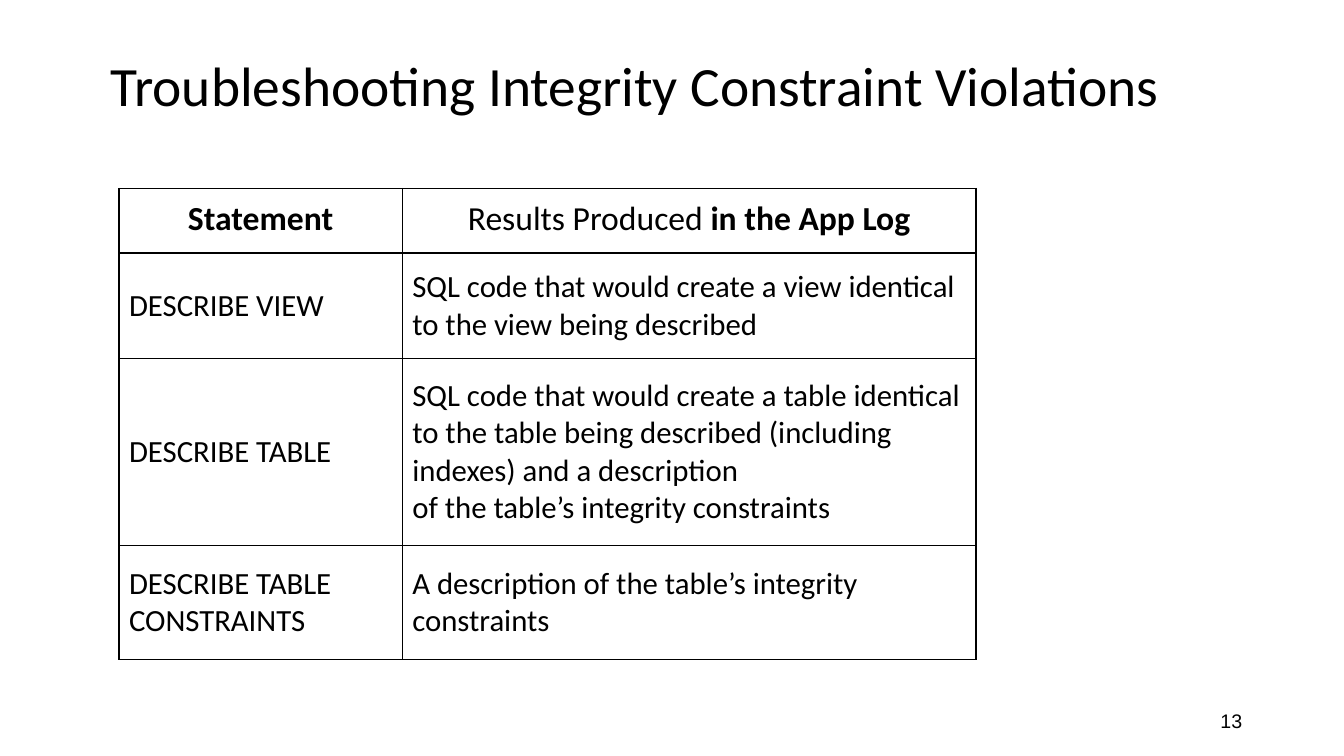
from lxml import etree
from pptx import Presentation, util as u
from pptx.dml.color import RGBColor
from pptx.enum import text
from pptx.oxml.ns import qn

# Content: each cell is a list of (words, bold) runs
TITLE = "Troubleshooting Integrity Constraint Violations"
PAGE_NUMBER = "13"
HEADER = [
    [("Statement", True)],
    [("Results Produced ", False), ("in the App Log", True)],
]
STATEMENTS = [
    ("DESCRIBE VIEW",
     "SQL code that would create a view identical to the view being described"),
    ("DESCRIBE TABLE",
     "SQL code that would create a table identical to the table being described "
     "(including indexes) and a description \nof the table’s integrity constraints"),
    ("DESCRIBE TABLE\nCONSTRAINTS",
     "A description of the table’s integrity constraints"),
]
ROWS = [HEADER] + [[[(words, False)] for words in pair] for pair in STATEMENTS]

# Layout in inches
COLUMN_WIDTHS = [2.81, 5.69]
ROW_HEIGHTS = [0.64, 1.05, 1.85, 1.13]
TABLE_LEFT, TABLE_TOP = 1.18, 1.87
CELL_MARGIN = 0.1

BLACK = RGBColor(0, 0, 0)
BODY_FONT, NUMBER_FONT = "Calibri", "Arial"


def add_runs(para, runs, size, font=BODY_FONT):
    for words, bold in runs:
        for index, line in enumerate(words.split("\n")):
            if index:
                para.add_line_break()
            span = para.add_run()
            span.text = line
            span.font.size = u.Pt(size)
            span.font.name = font
            span.font.bold = bold
            span.font.color.rgb = BLACK


def add_label(page, place, words, size, font, align):
    box = page.shapes.add_textbox(*[u.Inches(length) for length in place])
    frame = box.text_frame
    frame.word_wrap = True
    frame.vertical_anchor = text.MSO_ANCHOR.MIDDLE
    para = frame.paragraphs[0]
    para.alignment = align
    add_runs(para, [(words, False)], size, font)
    return para


def add_borders(cell):
    properties = cell._tc.get_or_add_tcPr()
    for position, side in enumerate(("lnL", "lnR", "lnT", "lnB")):
        line = etree.Element(qn("a:" + side), w=str(u.Pt(1)))
        fill = etree.SubElement(line, qn("a:solidFill"))
        etree.SubElement(fill, qn("a:srgbClr"), val=str(BLACK))
        properties.insert(position, line)


def add_statement_table(page):
    table = page.shapes.add_table(
        len(ROWS), len(COLUMN_WIDTHS), u.Inches(TABLE_LEFT), u.Inches(TABLE_TOP),
        u.Inches(sum(COLUMN_WIDTHS)), u.Inches(sum(ROW_HEIGHTS))).table
    table.horz_banding = False
    table.first_row = False
    for column, width in zip(table.columns, COLUMN_WIDTHS):
        column.width = u.Inches(width)
    for r, (row, height) in enumerate(zip(ROWS, ROW_HEIGHTS)):
        table.rows[r].height = u.Inches(height)
        is_header = r == 0
        for c, runs in enumerate(row):
            cell = table.cell(r, c)
            cell.fill.background()
            cell.margin_left = cell.margin_right = u.Inches(CELL_MARGIN)
            cell.margin_top = cell.margin_bottom = u.Inches(CELL_MARGIN)
            cell.vertical_anchor = (
                text.MSO_ANCHOR.TOP if is_header else text.MSO_ANCHOR.MIDDLE)
            para = cell.text_frame.paragraphs[0]
            para.alignment = text.PP_ALIGN.CENTER if is_header else text.PP_ALIGN.LEFT
            add_runs(para, runs, 24 if is_header else 22)
            add_borders(cell)


def main():
    deck = Presentation()
    deck.slide_width, deck.slide_height = u.Inches(13.33), u.Inches(7.5)
    page = deck.slides.add_slide(deck.slide_layouts[6])

    # Title
    heading = add_label(page, (1, 0.5, 12.33, 0.75), TITLE, 39.6, BODY_FONT,
                        text.PP_ALIGN.LEFT)
    heading.line_spacing = 0.9

    # Statements and their results
    add_statement_table(page)

    # Page number
    add_label(page, (9.42, 6.95, 3, 0.4), PAGE_NUMBER, 14, NUMBER_FONT,
              text.PP_ALIGN.RIGHT)

    deck.save("out.pptx")


if __name__ == "__main__":
    main()
